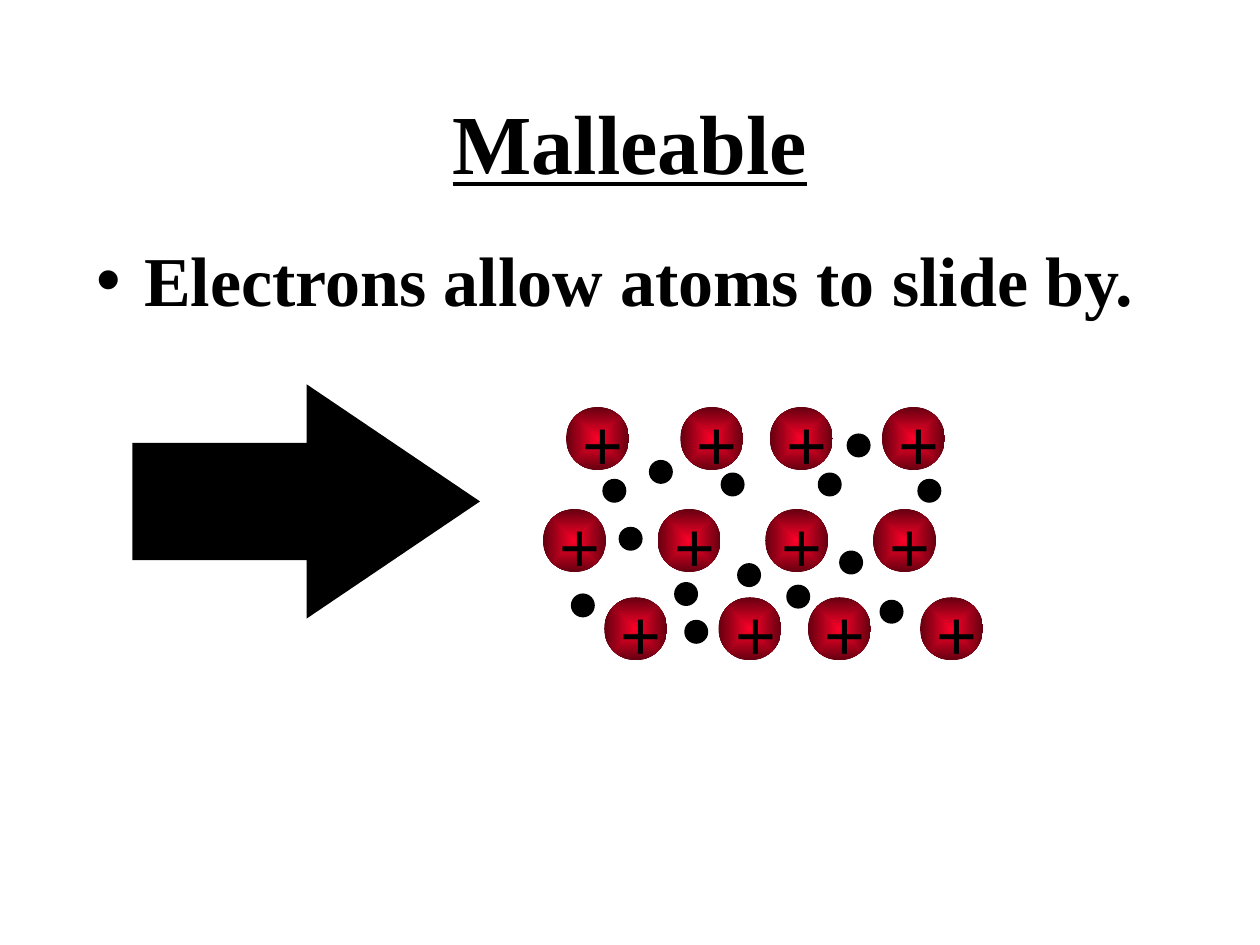
from lxml import etree
from pptx import Presentation
from pptx.dml.color import RGBColor
from pptx.enum.shapes import MSO_SHAPE
from pptx.enum.text import MSO_ANCHOR, MSO_AUTO_SIZE, PP_ALIGN
from pptx.oxml.ns import qn
from pptx.util import Pt

OVAL = MSO_SHAPE.OVAL
RIGHT_ARROW = MSO_SHAPE.RIGHT_ARROW
CENTER, LEFT = PP_ALIGN.CENTER, PP_ALIGN.LEFT
TOP, MIDDLE = MSO_ANCHOR.TOP, MSO_ANCHOR.MIDDLE
GROW, FIXED = MSO_AUTO_SIZE.SHAPE_TO_FIT_TEXT, MSO_AUTO_SIZE.NONE

COLORS = {"ink": "000000", "core": "FC0128", "rim": "650010"}
FORMATS = {
    "title": {"name": "Times New Roman", "size": Pt(48), "bold": True, "underline": True},
    "body": {"name": "Times New Roman", "size": Pt(40), "bold": True},
    "charge": {"name": "Arial", "size": Pt(40)},
}

ATOM_SIZE = 36
ELECTRON_SIZE = 13.7
OUTER_STEPS = (0, 65.3, 116.4, 180.5)
MIDDLE_STEPS = (0, 65.5, 127, 188.6)
ATOM_ROWS = [
    (323.5, 232.6, OUTER_STEPS),
    (310.3, 290.9, MIDDLE_STEPS),
    (345.3, 341.3, OUTER_STEPS),
]
ELECTRONS = [
    (467.3, 270), (370.8, 262.8), (326.2, 339.1), (353.5, 301), (411.8, 270),
    (391, 354.2), (502.6, 342.7), (421.2, 321.8), (449.3, 334.1), (479.5, 314.6),
    (524.2, 273.6), (483.8, 247.7), (344.2, 273.6), (385.2, 332.6),
]


class SlideBuilder:
    def __init__(self, page):
        self.page = page

    def color(self, name):
        return RGBColor.from_string(COLORS[name])

    def set_text(self, box, text, style, align, anchor, auto_size):
        frame = box.text_frame
        frame.word_wrap = True
        frame.auto_size = auto_size
        frame.vertical_anchor = anchor
        para = frame.paragraphs[0]
        para.alignment = align
        span = para.add_run()
        span.text = text
        for key, value in FORMATS[style].items():
            setattr(span.font, key, value)
        span.font.color.rgb = self.color("ink")

    def placeholder(self, index, text, style, bounds, align, anchor, auto_size):
        box = self.page.placeholders[index]
        box.left, box.top, box.width, box.height = map(Pt, bounds)
        self.set_text(box, text, style, align, anchor, auto_size)

    def shape(self, parent, kind, left, top, width, height):
        shape = parent.shapes.add_shape(kind, Pt(left), Pt(top), Pt(width), Pt(height))
        shape.shadow.inherit = False
        shape.line.fill.background()
        shape.fill.solid()
        shape.fill.fore_color.rgb = self.color("ink")
        return shape

    def radial_fill(self, shape):
        shape.fill.gradient()
        for stop, name in zip(shape.fill.gradient_stops, ("core", "rim")):
            stop.color.rgb = self.color(name)
        gradient = shape.element.spPr.find(qn("a:gradFill"))
        gradient.remove(gradient.find(qn("a:lin")))
        radial = etree.SubElement(gradient, qn("a:path"), {"path": "shape"})
        etree.SubElement(radial, qn("a:fillToRect"), dict.fromkeys("ltrb", "50000"))

    def atom(self, left, top):
        group = self.page.shapes.add_group_shape()
        ball = self.shape(group, OVAL, left, top, ATOM_SIZE, ATOM_SIZE)
        self.radial_fill(ball)
        box = group.shapes.add_textbox(Pt(left + 2.4), Pt(top - 7.2), Pt(23.8), Pt(55.4))
        self.set_text(box, "+", "charge", LEFT, TOP, GROW)

    def electron(self, left, top):
        self.shape(self.page, OVAL, left, top, ELECTRON_SIZE, ELECTRON_SIZE)

    def arrow(self, left, top, width, height, head):
        arrow = self.shape(self.page, RIGHT_ARROW, left, top, width, height)
        arrow.adjustments[1] = head


def main():
    deck = Presentation()
    deck.slide_width, deck.slide_height = Pt(720), Pt(540)
    builder = SlideBuilder(deck.slides.add_slide(deck.slide_layouts[1]))

    builder.placeholder(0, "Malleable", "title", (54, 48.2, 612, 64.8), CENTER, MIDDLE, GROW)
    builder.placeholder(1, "Electrons allow atoms to slide by.", "body",
                        (48.2, 131.8, 612, 324), LEFT, TOP, FIXED)
    for start, top, steps in ATOM_ROWS:
        for step in steps:
            builder.atom(start + step, top)
    for left, top in ELECTRONS:
        builder.electron(left, top)
    builder.arrow(75.6, 219.6, 198.7, 133.9, 0.74)

    deck.save("out.pptx")


if __name__ == "__main__":
    main()
